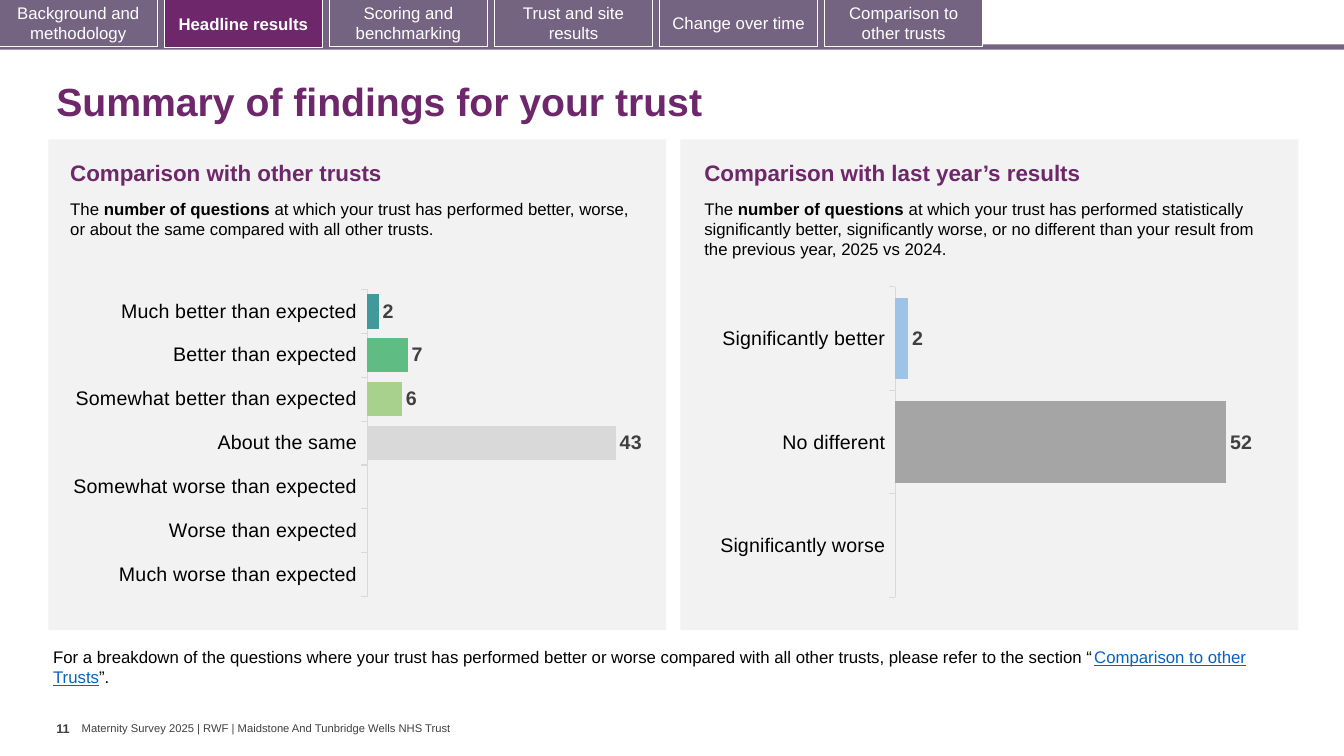
"""Build the summary-of-findings slide with navigation tabs and two result panels."""
from dataclasses import dataclass
from typing import Optional

from lxml import etree
from pptx import Presentation
from pptx import util as u
from pptx.chart import data as chart_data
from pptx.dml import color
from pptx.enum import chart as charts, shapes, text

FONT = "Arial"
PURPLE, MAUVE, WHITE, BLACK = "6D276A", "756382", "FFFFFF", "000000"
PANEL_GREY, DARK_GREY, AXIS_GREY, LINK_BLUE = "F2F2F2", "404040", "D9D9D9", "0563C1"
TAB_LABELS = ("Background and methodology", "Headline results", "Scoring and benchmarking",
              "Trust and site results", "Change over time", "Comparison to other trusts")
ACTIVE_TAB = "Headline results"
TAB_LEFT, TAB_PITCH, TAB_WIDTH, TAB_HEIGHT = -0.02, 4.16, 3.99, 1.19


@dataclass(frozen=True)
class Box:
    left: float
    top: float
    width: float
    height: float

    def lengths(self) -> tuple:
        return tuple(u.Cm(side) for side in (self.left, self.top, self.width, self.height))


@dataclass(frozen=True)
class Span:
    words: str
    size: float = 12
    hue: str = BLACK
    bold: bool = False
    underline: bool = False


@dataclass(frozen=True)
class Bar:
    category: str
    count: Optional[int]
    hue: str


@dataclass(frozen=True)
class Panel:
    left: float
    text_left: float
    text_width: float
    heading: str
    explanation: str
    chart_box: Box
    plot: tuple
    axis_max: int
    bars: tuple


PANELS = (
    Panel(1.22, 1.52, 15.04, "Comparison with other trusts",
          "at which your trust has performed better, worse, or about the same "
          "compared with all other trusts.",
          Box(1.22, 6.65, 15.57, 8.89), (0.516, 0.072, 0.468, 0.872), 50,
          (Bar("Much better than expected", 2, "419999"),
           Bar("Better than expected", 7, "5FBD83"),
           Bar("Somewhat better than expected", 6, "A9D18E"),
           Bar("About the same", 43, "D9D9D9"),
           Bar("Somewhat worse than expected", None, "FFD966"),
           Bar("Worse than expected", None, "F1BE48"),
           Bar("Much worse than expected", None, "E87722"))),
    Panel(17.15, 17.5, 14.58, "Comparison with last year’s results",
          "at which your trust has performed statistically significantly better, significantly "
          "worse, or no different than your result from the previous year, 2025 vs 2024.",
          Box(16.87, 6.93, 15.82, 8.61), (0.36, 0.035, 0.608, 0.909), 60,
          (Bar("Significantly better", 2, "9DC3E6"),
           Bar("No different", 52, "A5A5A5"),
           Bar("Significantly worse", None, "7030A0"))),
)


def rgb(hue: str) -> color.RGBColor:
    return color.RGBColor.from_string(hue)


def style_font(font, size: float, hue: str, bold: bool = False) -> None:
    font.name, font.size, font.bold = FONT, u.Pt(size), bold
    font.color.rgb = rgb(hue)


def add_spans(paragraph, spans: tuple) -> None:
    for span in spans:
        run = paragraph.add_run()
        run.text = span.words
        style_font(run.font, span.size, span.hue, span.bold)
        run.font.underline = span.underline


def add_rectangle(slide, box: Box, fill: str, outline: Optional[str] = None):
    rectangle = slide.shapes.add_shape(shapes.MSO_SHAPE.RECTANGLE, *box.lengths())
    rectangle.shadow.inherit = False
    rectangle.fill.solid()
    rectangle.fill.fore_color.rgb = rgb(fill)
    if outline:
        rectangle.line.color.rgb = rgb(outline)
        rectangle.line.width = u.Pt(0.75)
    else:
        rectangle.line.fill.background()
    return rectangle


def add_text(slide, box: Box, *spans: Span, wrap: bool = True, middle: bool = False):
    frame = slide.shapes.add_textbox(*box.lengths()).text_frame
    frame.word_wrap = wrap
    if middle:
        frame.vertical_anchor = text.MSO_ANCHOR.MIDDLE
    add_spans(frame.paragraphs[0], spans)
    return frame


def add_tab(slide, position: int, label: str) -> None:
    active = label == ACTIVE_TAB
    box = Box(TAB_LEFT + position * TAB_PITCH, 0 if active else -0.02, TAB_WIDTH, TAB_HEIGHT)
    tab = add_rectangle(slide, box, PURPLE if active else MAUVE, WHITE)
    tab.text_frame.vertical_anchor = text.MSO_ANCHOR.MIDDLE
    paragraph = tab.text_frame.paragraphs[0]
    paragraph.alignment = text.PP_ALIGN.CENTER
    add_spans(paragraph, (Span(label, 12, WHITE, active),))


def place_plot(chart, plot: tuple) -> None:
    area = chart.plots[0]._element.getparent()
    namespace = etree.QName(area).namespace
    for layout in area.findall(f"{{{namespace}}}layout"):
        area.remove(layout)
    layout = etree.Element(f"{{{namespace}}}layout")
    manual = etree.SubElement(layout, f"{{{namespace}}}manualLayout")
    settings = (("layoutTarget", "inner"), ("xMode", "edge"), ("yMode", "edge"),
                *zip("xywh", plot))
    for tag, value in settings:
        etree.SubElement(manual, f"{{{namespace}}}{tag}").set("val", str(value))
    area.insert(0, layout)


def add_bar_chart(slide, panel: Panel) -> None:
    figures = chart_data.CategoryChartData(number_format="0")
    figures.categories = [bar.category for bar in panel.bars]
    figures.add_series("Series 1", [bar.count for bar in panel.bars])
    chart = slide.shapes.add_chart(charts.XL_CHART_TYPE.BAR_CLUSTERED,
                                   *panel.chart_box.lengths(), figures).chart
    chart.has_legend = chart.has_title = False
    style_font(chart.font, 14, BLACK)

    outcomes = chart.category_axis
    outcomes.reverse_order = True
    outcomes.has_major_gridlines = False
    outcomes.major_tick_mark = charts.XL_TICK_MARK.OUTSIDE
    outcomes.format.line.color.rgb = rgb(AXIS_GREY)
    outcomes.format.line.width = u.Pt(0.75)
    style_font(outcomes.tick_labels.font, 14, BLACK)

    counts = chart.value_axis
    counts.minimum_scale, counts.maximum_scale = 0, panel.axis_max
    counts.has_major_gridlines = False
    counts.visible = False

    bars = chart.plots[0]
    bars.gap_width = 27
    bars.vary_by_categories = False
    series = bars.series[0]
    for index, bar in enumerate(panel.bars):
        fill = series.points[index].format.fill
        fill.solid()
        fill.fore_color.rgb = rgb(bar.hue)
    labels = series.data_labels
    labels.show_value = True
    labels.position = charts.XL_LABEL_POSITION.OUTSIDE_END
    labels.number_format, labels.number_format_is_linked = "0", False
    style_font(labels.font, 14, DARK_GREY, True)
    place_plot(chart, panel.plot)


def add_panel(slide, panel: Panel) -> None:
    add_rectangle(slide, Box(panel.left, 3.51, 15.57, 12.37), PANEL_GREY)
    add_text(slide, Box(panel.text_left, 3.89, panel.text_width, 0.94),
             Span(panel.heading, 16, PURPLE, True))
    add_text(slide, Box(panel.text_left, 4.88, panel.text_width, 1.8),
             Span("The "), Span("number of questions ", bold=True), Span(panel.explanation))
    add_bar_chart(slide, panel)


def main() -> None:
    deck = Presentation()
    deck.slide_width, deck.slide_height = u.Cm(33.87), u.Cm(19.05)
    slide = deck.slides.add_slide(deck.slide_layouts[6])

    add_rectangle(slide, Box(-0.08, 1.12, 34.01, 0.13), MAUVE)
    add_rectangle(slide, Box(-0.08, 0, 24.31, 1.19), MAUVE)
    for position, label in enumerate(TAB_LABELS):
        add_tab(slide, position, label)

    title = add_text(slide, Box(1.17, 1.7, 31.72, 1.83),
                     Span("Summary of findings for your trust", 28, PURPLE, True), middle=True)
    title.paragraphs[0].line_spacing = 0.9
    for panel in PANELS:
        add_panel(slide, panel)

    add_text(slide, Box(1.09, 16.18, 31.01, 1.27),
             Span("For a breakdown of the questions where your trust has performed better or worse "
                  "compared with all other trusts, please refer to the section “"),
             Span("Comparison to other Trusts", hue=LINK_BLUE, underline=True), Span("”."))
    page_number = add_text(slide, Box(1.42, 18.03, 0.64, 1.02),
                           Span("11", 9, DARK_GREY, True), wrap=False)
    page_number.margin_left = page_number.margin_right = 0
    footer = add_text(slide, Box(2.06, 18.19, 9.45, 0.33),
                      Span("Maternity Survey 2025 | RWF | Maidstone And Tunbridge Wells NHS Trust",
                           8, DARK_GREY), wrap=False, middle=True)
    footer.margin_left = footer.margin_right = footer.margin_top = footer.margin_bottom = 0
    deck.save("out.pptx")


if __name__ == "__main__":
    main()
